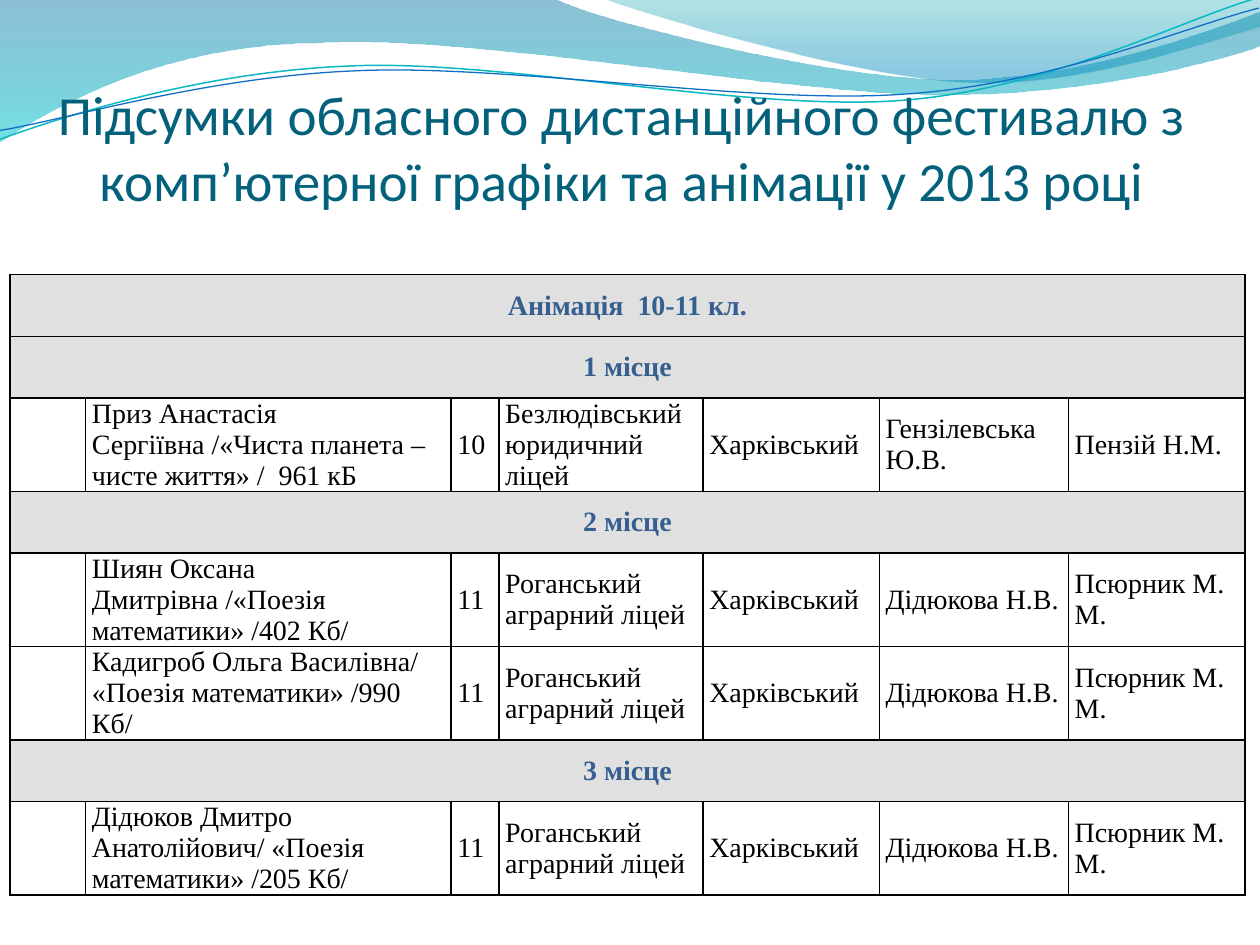
from lxml import etree
from pptx import Presentation
from pptx.dml.color import RGBColor
from pptx.enum.text import MSO_ANCHOR, MSO_AUTO_SIZE, PP_ALIGN
from pptx.oxml.ns import qn
from pptx.util import Emu, Pt

CENTER, LEFT = PP_ALIGN.CENTER, PP_ALIGN.LEFT
MIDDLE, BOTTOM = MSO_ANCHOR.MIDDLE, MSO_ANCHOR.BOTTOM
NO_FIT = MSO_AUTO_SIZE.NONE
EMU_PER_PX = 9144
HARD_SPACE = chr(160)
COLORS = {
    "title": "04617B", "heading": "365F91", "text": "000000", "border": "000000",
    "band": "E0E0E0", "deep": "0074A1", "cyan": "00C6CF", "teal": "00A1A9",
    "azure": "008BBF", "teal line": "0AB8BF", "blue line": "0F6FC6",
}
BROAD_WAVE = [
    (0, -1), (440, -1), (476, 17, 664, 63, 758, 63), (853, 63, 958, 26, 1000, 9),
    (1001, 36), (983, 44, 870, 76, 746, 75), (622, 75, 382, 28, 257, 34),
    (129, 35, 46, 83, -1, 113), (0, -1),
]
CORNER_WAVE = [
    (479, -1), (509, 11, 682, 62, 769, 65), (856, 69, 961, 32, 1000, 21), (1000, 0),
    (479, -1),
]
TEAL_CURVE = [
    (-2, 87), (47, 72, 158, 41, 278, 42), (396, 42, 591, 93, 712, 90),
    (832, 87, 940, 36, 1000, 22),
]
BLUE_CURVE = [
    (-2, 80), (46, 75, 164, 45, 283, 46), (403, 46, 596, 88, 716, 85),
    (835, 83, 942, 42, 1001, 30),
]
CURVE_TILT = 357.3
TITLE = "Підсумки обласного дистанційного фестивалю з комп’ютерної графіки та анімації у 2013 році"
ROHAN = ("11", "Роганський аграрний ліцей", "Харківський",
         f"Дідюкова{HARD_SPACE}Н.В.", f"Псюрник{HARD_SPACE}М.М.")
RESULTS = [
    ("Анімація  10-11 кл.",),
    ("1 місце",),
    ("", "Приз Анастасія Сергіївна /«Чиста планета – чисте життя» /  961 кБ", "10",
     "Безлюдівський юридичний ліцей", "Харківський", "Гензілевська Ю.В.", "Пензій Н.М."),
    ("2 місце",),
    ("", "Шиян Оксана Дмитрівна /«Поезія математики» /402 Кб/", *ROHAN),
    ("", "Кадигроб Ольга Василівна/ «Поезія математики» /990 Кб/", *ROHAN),
    ("3 місце",),
    ("", "Дідюков Дмитро Анатолійович/ «Поезія математики» /205 Кб/", *ROHAN),
]
COLUMN_WIDTHS = [60, 290, 38, 162, 140, 150, 140]
BAND_HEIGHT, ENTRY_HEIGHT = 49, 62


def px(value):
    return Emu(value * EMU_PER_PX)


def rgb(name):
    return RGBColor.from_string(COLORS[name])


class SlideBuilder:
    """Holds the style and the current slide and draws each kind of element."""

    def __init__(self, page):
        self.page = page
        self.title_font, self.title_size = "Calibri", Pt(31.5)
        self.table_font, self.table_size = "Times New Roman", Pt(16)

    def style(self, paragraph, font, size, color, align, bold=False):
        paragraph.alignment = align
        paragraph.font.name, paragraph.font.size = font, size
        paragraph.font.bold = bold
        paragraph.font.color.rgb = rgb(color)

    def outline(self, segments, close):
        points = [(px(x), px(y)) for segment in segments
                  for x, y in zip(segment[::2], segment[1::2])]
        builder = self.page.shapes.build_freeform(*points[0])
        builder.add_line_segments(points[1:], close=close)
        shape = builder.convert_to_shape()
        shape.shadow.inherit = False
        steps = iter(list(shape.element.spPr.iter(qn("a:lnTo"))))
        for segment in segments[1:]:
            step = next(steps)
            if len(segment) == 6:
                step.tag = qn("a:cubicBezTo")
                for extra in (next(steps), next(steps)):
                    step.append(extra[0])
                    extra.getparent().remove(extra)
        self.rename_curves(shape)
        return shape

    def rename_curves(self, shape):
        for path in shape.element.spPr.iter(qn("a:path")):
            for step in list(path):
                if len(step) == 3:
                    curve = etree.Element(qn("a:cubicBezTo"))
                    curve.extend(list(step))
                    path.replace(step, curve)

    def wave(self, segments, stops):
        shape = self.outline(segments, True)
        shape.line.fill.background()
        shape.fill.gradient()
        shape.fill.gradient_angle = 270
        for stop, (position, color, _) in zip(shape.fill.gradient_stops, stops):
            stop.position = position
            stop.color.rgb = rgb(color)
        for tint, (_, _, opacity) in zip(shape.element.spPr.iter(qn("a:srgbClr")), stops):
            etree.SubElement(tint, qn("a:alpha"), val=str(opacity * 1000))

    def curve(self, segments, color, width):
        shape = self.outline(segments, False)
        shape.rotation = CURVE_TILT
        shape.fill.background()
        shape.line.color.rgb = rgb(color)
        shape.line.width = Pt(width)

    def title(self, text, left, top, width, height):
        box = self.page.shapes.title
        box.element.getparent().append(box.element)
        box.left, box.top, box.width, box.height = map(px, (left, top, width, height))
        frame = box.text_frame
        frame.text = text
        frame.word_wrap, frame.auto_size = True, NO_FIT
        frame.vertical_anchor = BOTTOM
        frame.margin_left = frame.margin_right = frame.margin_bottom = 0
        frame.margin_top = px(5)
        self.style(frame.paragraphs[0], self.title_font, self.title_size, "title", CENTER)

    def borders(self, cell):
        properties = cell._tc.get_or_add_tcPr()
        for side in ("lnL", "lnR", "lnT", "lnB"):
            line = etree.SubElement(properties, qn(f"a:{side}"), w=str(Pt(1)))
            fill = etree.SubElement(line, qn("a:solidFill"))
            etree.SubElement(fill, qn("a:srgbClr"), val=COLORS["border"])

    def cell(self, cell, text, heading):
        self.borders(cell)
        if heading:
            cell.fill.solid()
            cell.fill.fore_color.rgb = rgb("band")
        else:
            cell.fill.background()
        cell.vertical_anchor = MIDDLE
        cell.margin_left = cell.margin_right = px(5)
        cell.margin_top = cell.margin_bottom = 0
        cell.text = text
        color, align = ("heading", CENTER) if heading else ("text", LEFT)
        self.style(cell.text_frame.paragraphs[0], self.table_font, self.table_size,
                   color, align, heading)

    def table(self, rows, widths, left, top):
        heights = [BAND_HEIGHT if len(row) == 1 else ENTRY_HEIGHT for row in rows]
        table = self.page.shapes.add_table(
            len(rows), len(widths), px(left), px(top), px(sum(widths)), px(sum(heights))).table
        table.first_row = table.horz_banding = False
        for column, width in zip(table.columns, widths):
            column.width = px(width)
        for index, (row, height) in enumerate(zip(rows, heights)):
            table.rows[index].height = px(height)
            heading = len(row) == 1
            texts = row + ("",) * (len(widths) - len(row))
            for position, text in enumerate(texts):
                self.cell(table.cell(index, position), text, heading)
            if heading:
                table.cell(index, 0).merge(table.cell(index, len(widths) - 1))


def main():
    deck = Presentation()
    deck.slide_width, deck.slide_height = px(1000), px(750)
    slide = SlideBuilder(deck.slides.add_slide(deck.slide_layouts[5]))
    slide.wave(BROAD_WAVE, [(0, "deep", 45), (1, "cyan", 55)])
    slide.wave(CORNER_WAVE, [(0, "teal", 30), (0.8, "azure", 45)])
    slide.curve(TEAL_CURVE, "teal line", 0.85)
    slide.curve(BLUE_CURVE, "blue line", 0.75)
    slide.title(TITLE, 43, 44, 900, 125)
    slide.table(RESULTS, COLUMN_WIDTHS, 8, 218)
    deck.save("out.pptx")


if __name__ == "__main__":
    main()
